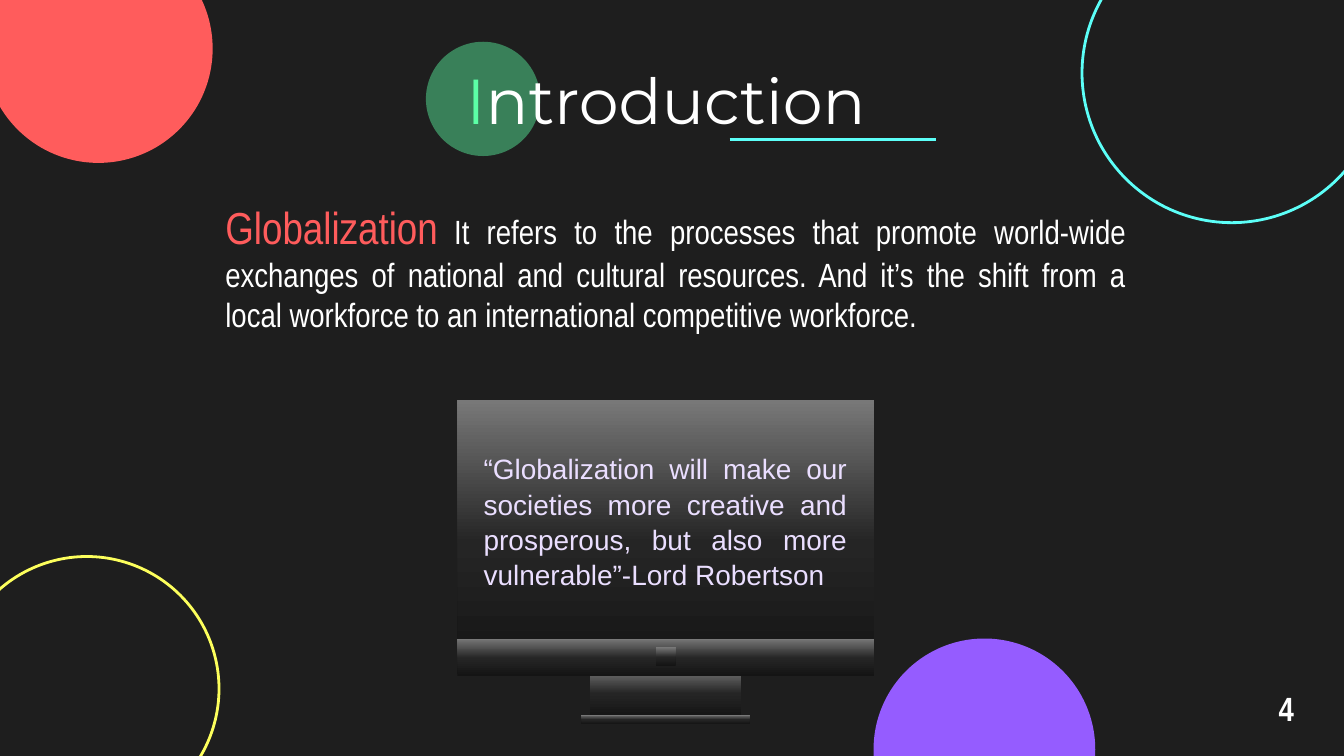
"""Build the Introduction slide about globalization."""
import dataclasses

import lxml.etree
import pptx
import pptx.dml.color
import pptx.enum.shapes
import pptx.enum.text
import pptx.oxml
import pptx.oxml.ns
import pptx.util

Cm = pptx.util.Cm
Pt = pptx.util.Pt
ALIGN = pptx.enum.text.PP_ALIGN
ANCHOR = pptx.enum.text.MSO_ANCHOR
SHAPE = pptx.enum.shapes.MSO_SHAPE


@dataclasses.dataclass(frozen=True)
class Theme:
    background: str = "1E1E1E"
    white: str = "FFFFFF"
    green: str = "5CFFA6"
    red: str = "FF5C5C"
    cyan: str = "5CFFF8"
    yellow: str = "FDFF5C"
    purple: str = "955CFF"
    lilac: str = "EADEFF"
    metal: tuple = ((0, "141414"), (48, "252525"), (100, "787878"))
    title_font: str = "Montserrat"
    body_font: str = "Arial Narrow"
    quote_font: str = "Arial"
    title_size: int = 34
    term_size: int = 24
    body_size: int = 18
    gap_size: int = 16
    quote_size: int = 15
    line_width: float = 1.5


def rgb(value):
    return pptx.dml.color.RGBColor.from_string(value)


class SlideBuilder:
    def __init__(self, slide, theme):
        self.slide = slide
        self.theme = theme
        background = slide.background.fill
        background.solid()
        background.fore_color.rgb = rgb(theme.background)

    def circle(self, left, top, diameter, fill=None, line=None, opacity=100):
        shape = self.slide.shapes.add_shape(
            SHAPE.OVAL, Cm(left), Cm(top), Cm(diameter), Cm(diameter))
        shape.shadow.inherit = False
        if fill:
            shape.fill.solid()
            shape.fill.fore_color.rgb = rgb(fill)
            if opacity < 100:
                color = shape.fill._xPr.find(".//" + pptx.oxml.ns.qn("a:srgbClr"))
                alpha = lxml.etree.SubElement(color, pptx.oxml.ns.qn("a:alpha"))
                alpha.set("val", str(opacity * 1000))
        else:
            shape.fill.background()
        if line:
            shape.line.color.rgb = rgb(line)
            shape.line.width = Pt(self.theme.line_width)
        else:
            shape.line.fill.background()

    def rule(self, left, right, top, color):
        connector = self.slide.shapes.add_connector(
            pptx.enum.shapes.MSO_CONNECTOR.STRAIGHT,
            Cm(left), Cm(top), Cm(right), Cm(top))
        connector.line.color.rgb = rgb(color)
        connector.line.width = Pt(self.theme.line_width)
        lxml.etree.SubElement(
            connector._element.spPr, pptx.oxml.ns.qn("a:effectLst"))

    def metal_block(self, group, center, top, width, height):
        shape = group.shapes.add_shape(
            SHAPE.RECTANGLE, Cm(center - width / 2), Cm(top), Cm(width), Cm(height))
        shape.shadow.inherit = False
        shape.line.fill.background()
        shape.fill.gradient()
        shape.fill.gradient_angle = 90
        stops = shape._element.spPr.find(".//" + pptx.oxml.ns.qn("a:gsLst"))
        for stop in list(stops):
            stops.remove(stop)
        for position, color in self.theme.metal:
            stops.append(pptx.oxml.parse_xml(
                f'<a:gs {pptx.oxml.ns.nsdecls("a")} pos="{position * 1000}">'
                f'<a:srgbClr val="{color}"/></a:gs>'))

    def monitor(self, center, blocks):
        group = self.slide.shapes.add_group_shape()
        for top, width, height in blocks:
            self.metal_block(group, center, top, width, height)

    def text(self, left, top, width, height, font, runs, align,
             anchor=ANCHOR.TOP, inset=0.25, bold=False, spacing=None):
        shape = self.slide.shapes.add_textbox(
            Cm(left), Cm(top), Cm(width), Cm(height))
        frame = shape.text_frame
        frame.word_wrap = True
        frame.vertical_anchor = anchor
        frame.margin_left = frame.margin_right = Cm(0.25)
        frame.margin_top = frame.margin_bottom = Cm(inset)
        paragraph = frame.paragraphs[0]
        paragraph.alignment = align
        if spacing:
            paragraph.line_spacing = spacing
        for content, size, color in runs:
            run = paragraph.add_run()
            run.text = content
            run.font.name = font
            run.font.size = Pt(size)
            run.font.bold = bold
            run.font.color.rgb = rgb(color)


def main():
    presentation = pptx.Presentation()
    presentation.slide_width = Cm(25.4)
    presentation.slide_height = Cm(14.29)
    theme = Theme()
    builder = SlideBuilder(
        presentation.slides.add_slide(presentation.slide_layouts[6]), theme)

    builder.circle(8.05, 0.79, 2.16, fill=theme.green, opacity=44)
    builder.text(23.55, 12.95, 1.52, 0.86, theme.body_font,
                 [("4", theme.body_size, theme.white)],
                 ALIGN.CENTER, ANCHOR.MIDDLE, bold=True)
    builder.text(4.01, 3.53, 17.53, 3.3, theme.body_font, [
        ("Globalization", theme.term_size, theme.red),
        (" ", theme.gap_size, theme.red),
        ("It refers to the processes that promote world-wide exchanges of "
         "national and cultural resources. And it’s the shift from a local "
         "workforce to an international competitive workforce.",
         theme.body_size, theme.white),
    ], ALIGN.JUSTIFY)
    builder.text(6.05, 1.22, 13.08, 1.3, theme.title_font, [
        ("I", theme.title_size, theme.green),
        ("ntroduction", theme.title_size, theme.white),
    ], ALIGN.CENTER, ANCHOR.MIDDLE)

    builder.circle(16.51, 12.07, 4.19, fill=theme.purple)
    builder.circle(20.45, -1.45, 5.66, line=theme.cyan)
    builder.circle(-0.3, -1.24, 4.32, fill=theme.red)
    builder.circle(-0.86, 10.52, 5, line=theme.yellow)
    builder.rule(13.79, 17.68, 2.64, theme.cyan)

    stand = (12.62, 2.87, 0.94)
    screen = (7.57, 7.87, 5.18)
    bezel = (12.07, 7.87, 0.71)
    button = (12.24, 0.38, 0.36)
    foot = (13.51, 3.18, 0.18)
    builder.monitor(12.58, [stand, screen, bezel, button, foot])
    builder.text(8.89, 8.38, 7.37, 2.82, theme.quote_font, [
        ("“Globalization will make our societies more creative and "
         "prosperous, but also more vulnerable”-Lord Robertson",
         theme.quote_size, theme.lilac),
    ], ALIGN.JUSTIFY, inset=0.13, spacing=1.05)

    presentation.save("out.pptx")


if __name__ == "__main__":
    main()
